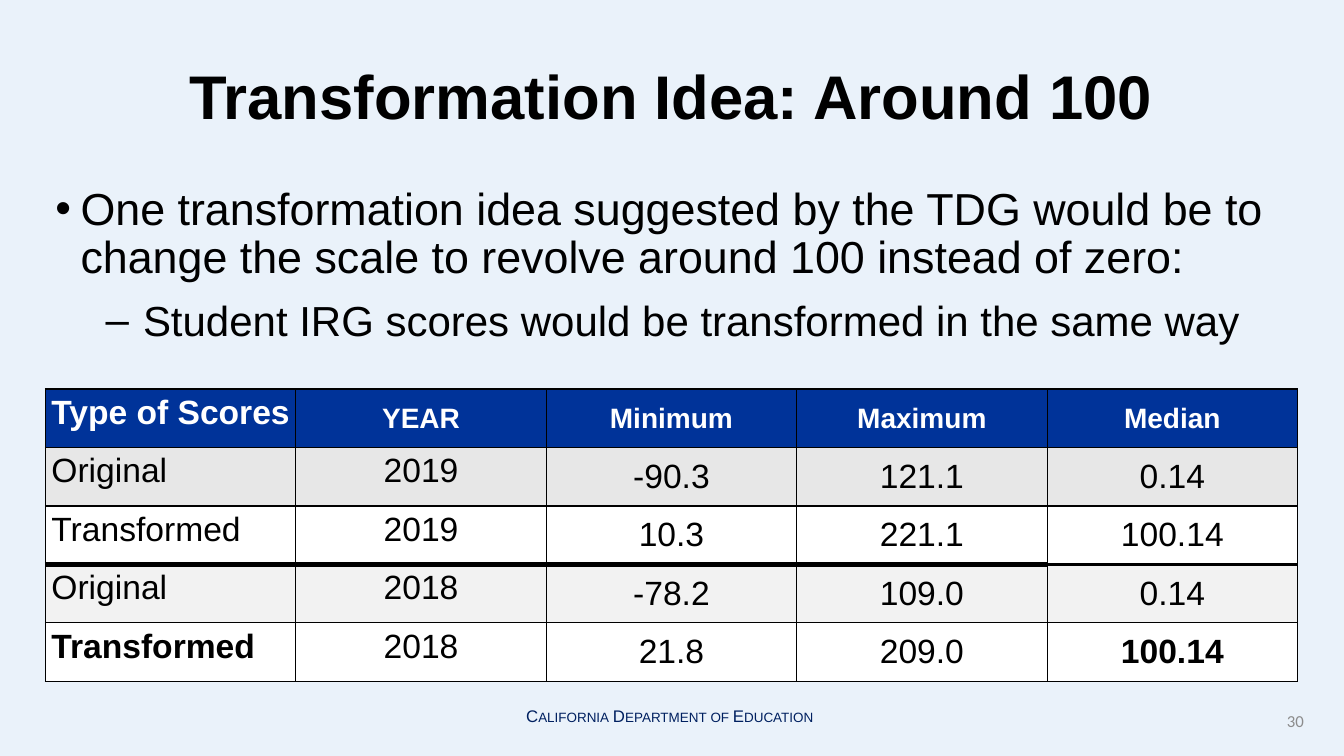
from lxml import etree
from pptx import Presentation
from pptx import util as u
from pptx.dml.color import RGBColor
from pptx.enum import text as t
from pptx.oxml import ns

COLORS = {
    "background": "EAF2FA", "black": "000000", "white": "FFFFFF",
    "header": "003399", "gray": "E7E7E7", "light_gray": "F2F2F2",
    "footer": "002060", "number": "8C8C8C",
}
SCORES = [
    ["Type of Scores", "YEAR", "Minimum", "Maximum", "Median"],
    ["Original", "2019", "-90.3", "121.1", "0.14"],
    ["Transformed", "2019", "10.3", "221.1", "100.14"],
    ["Original", "2018", "-78.2", "109.0", "0.14"],
    ["Transformed", "2018", "21.8", "209.0", "100.14"],
]
ROW_FILLS = ["header", "gray", "white", "light_gray", "white"]
BOLD_CELLS = {(4, 0), (4, 4)}
YEAR_BREAK = 3  # the first row below the thick rule
LEFT, WIDTH = 0.45, 12.42


def rgb(name):
    return RGBColor.from_string(COLORS[name])


def add_span(para, words, size, color="black", bold=False, font="Arial"):
    span = para.add_run()
    span.text = words
    span.font.name = font
    span.font.size = u.Pt(size)
    span.font.bold = bold
    span.font.color.rgb = rgb(color)
    return span


def add_box(page, left, top, width, height, wrap=True):
    box = page.shapes.add_textbox(*map(u.Inches, (left, top, width, height)))
    box.text_frame.word_wrap = wrap
    return box.text_frame


def add_title(page, words):
    title = page.shapes.title
    title.left, title.top = u.Inches(LEFT), u.Inches(0.18)
    title.width, title.height = u.Inches(WIDTH), u.Inches(1.62)
    title.text_frame.vertical_anchor = t.MSO_ANCHOR.MIDDLE
    para = title.text_frame.paragraphs[0]
    para.alignment = t.PP_ALIGN.CENTER
    para.line_spacing = 0.9
    add_span(para, words, 44, bold=True)


def format_bullet(para, level, mark, margin, hanging):
    para.level = level
    para.line_spacing = 0.9
    para.space_before = para.space_after = u.Pt(6)
    props = para._p.get_or_add_pPr()
    props.set("marL", str(u.Inches(margin)))
    props.set("indent", str(-u.Inches(hanging)))
    etree.SubElement(props, ns.qn("a:buFont"), typeface="Arial")
    etree.SubElement(props, ns.qn("a:buChar"), char=mark)


def add_bullets(page):
    frame = add_box(page, LEFT, 1.8, WIDTH, 1.87)
    idea = frame.paragraphs[0]
    format_bullet(idea, 0, "•", 0.25, 0.25)
    add_span(idea, "One transformation idea suggested by the TDG would be to "
             "change the scale to revolve around 100 instead of zero:", 32)
    detail = frame.add_paragraph()
    format_bullet(detail, 1, "‒", 0.87, 0.37)
    add_span(detail, "Student IRG scores would be transformed in the same way", 30)


def set_borders(cell, top, bottom):
    """Draw black cell borders; must run before the cell gets its fill."""
    props = cell._tc.get_or_add_tcPr()
    for side, points in (("L", 1), ("R", 1), ("T", top), ("B", bottom)):
        line = etree.SubElement(props, ns.qn(f"a:ln{side}"), w=str(u.Pt(points)))
        fill = etree.SubElement(line, ns.qn("a:solidFill"))
        etree.SubElement(fill, ns.qn("a:srgbClr"), val=COLORS["black"])


def fill_cell(cell, row, column, words):
    thick = 3 if column == 4 else 4.5
    set_borders(cell, top=thick if row == YEAR_BREAK else 1,
                bottom=thick if row == YEAR_BREAK - 1 else 1)
    cell.fill.solid()
    cell.fill.fore_color.rgb = rgb(ROW_FILLS[row])
    header = row == 0
    if column == 0 or (column == 1 and not header):
        cell.margin_left = u.Inches(0.06)
        # The widest label needs a slim right margin to stay on one line.
        cell.margin_right = u.Inches(0.06 if column else 0)
        cell.vertical_anchor = t.MSO_ANCHOR.TOP
    else:
        cell.vertical_anchor = t.MSO_ANCHOR.MIDDLE
    para = cell.text_frame.paragraphs[0]
    para.alignment = t.PP_ALIGN.CENTER if column else t.PP_ALIGN.LEFT
    add_span(para, words, 20 if header and column else 24,
             "white" if header else "black",
             header or (row, column) in BOLD_CELLS)


def add_scores(page):
    table = page.shapes.add_table(
        len(SCORES), len(SCORES[0]), u.Inches(LEFT), u.Inches(3.86),
        u.Inches(WIDTH), u.Inches(2.9)).table
    for row, values in enumerate(SCORES):
        for column, words in enumerate(values):
            fill_cell(table.cell(row, column), row, column, words)


def add_footer(page):
    department = add_box(page, 5.12, 6.95, 3.09, 0.3, wrap=False).paragraphs[0]
    span = add_span(department, "California Department of Education", 12, "footer")
    span.font._element.set("cap", "small")
    frame = add_box(page, 10.03, 6.95, 3, 0.4)
    frame.vertical_anchor = t.MSO_ANCHOR.MIDDLE
    number = frame.paragraphs[0]
    number.alignment = t.PP_ALIGN.RIGHT
    add_span(number, "30", 12, "number", font="Calibri")


def main():
    deck = Presentation()
    deck.slide_width, deck.slide_height = u.Inches(13.33), u.Inches(7.5)
    page = deck.slides.add_slide(deck.slide_layouts.get_by_name("Title Only"))
    page.background.fill.solid()
    page.background.fill.fore_color.rgb = rgb("background")
    add_title(page, "Transformation Idea: Around 100")
    add_bullets(page)
    add_scores(page)
    add_footer(page)
    deck.save("out.pptx")


if __name__ == "__main__":
    main()
